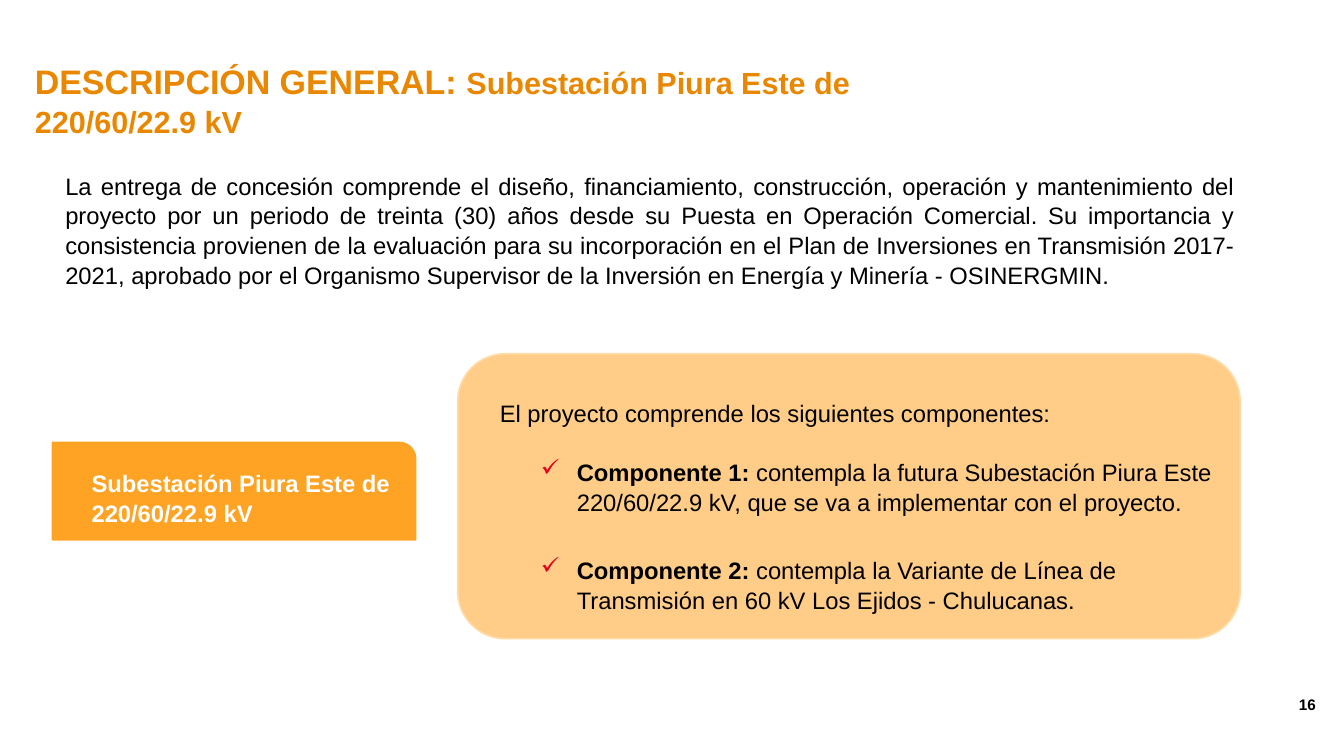
from dataclasses import dataclass

from lxml.etree import SubElement
from pptx import Presentation
from pptx.dml.color import RGBColor
from pptx.enum.shapes import MSO_SHAPE as Preset
from pptx.enum.text import MSO_ANCHOR as Anchor, MSO_AUTO_SIZE as AutoSize, PP_ALIGN as Align
from pptx.oxml.ns import qn
from pptx.util import Emu, Pt

EMU_PER_PX = 9144
FONT = "Arial"
ORANGE_TITLE = RGBColor(0xEA, 0x87, 0x00)
ORANGE_LABEL = RGBColor(0xFF, 0xA3, 0x25)
ORANGE_PANEL = RGBColor(0xFF, 0xCD, 0x87)
ORANGE_EDGE = RGBColor(0xFF, 0xDB, 0xA7)
RED_CHECK = RGBColor(0xE2, 0x05, 0x1B)
BLACK = RGBColor(0x00, 0x00, 0x00)
WHITE = RGBColor(0xFF, 0xFF, 0xFF)


@dataclass(frozen=True)
class Area:
    left: int
    top: int
    width: int
    height: int

    def emu(self) -> list[Emu]:
        return [px(n) for n in (self.left, self.top, self.width, self.height)]


@dataclass(frozen=True)
class Panel:
    preset: Preset
    area: Area
    fill: RGBColor
    line: RGBColor


@dataclass(frozen=True)
class Span:
    text: str
    size: int = 28
    bold: bool = False


@dataclass(frozen=True)
class Para:
    spans: tuple[Span, ...]
    left: int = 0
    hanging: int = 0
    check: bool = False
    after: int = 0


def px(count: int) -> Emu:
    return Emu(count * EMU_PER_PX)


def component(number: int, text: str, after: int = 0) -> Para:
    spans = (Span(f"Componente {number}: ", bold=True), Span(text))
    return Para(spans, left=176, hanging=59, check=True, after=after)


PANELS = (
    Panel(Preset.ROUND_1_RECTANGLE, Area(86, 724, 594, 159), ORANGE_LABEL, ORANGE_LABEL),
    Panel(Preset.ROUNDED_RECTANGLE, Area(749, 579, 1280, 466), ORANGE_PANEL, ORANGE_EDGE),
)
SUBSTATION = "Subestación Piura Este de 220/60/22.9 kV"
TITLE = Para((Span("DESCRIPCIÓN GENERAL: ", 40, True), Span(SUBSTATION, 36, True)))
CONCESSION = Para((Span(
    "La entrega de concesión comprende el diseño, financiamiento, construcción, operación y "
    "mantenimiento del proyecto por un periodo de treinta (30) años desde su Puesta en Operación "
    "Comercial. Su importancia y consistencia provienen de la evaluación para su incorporación en "
    "el Plan de Inversiones en Transmisión 2017-2021, aprobado por el Organismo Supervisor de la "
    "Inversión en Energía y Minería - OSINERGMIN."),), left=50)
COMPONENTS = (
    Para((Span("El proyecto comprende los siguientes componentes:"),), left=50, after=34),
    component(1, "contempla la futura Subestación Piura Este 220/60/22.9 kV, que se va a "
                 "implementar con el proyecto.", after=45),
    component(2, "contempla la Variante de Línea de Transmisión en 60 kV Los Ejidos - Chulucanas."),
)
LABEL = Para((Span(SUBSTATION, bold=True),))
PAGE_NUMBER = Para((Span("16", 18, True),))


def draw_panel(page, panel: Panel) -> None:
    shape = page.shapes.add_shape(panel.preset, *panel.area.emu())
    shape.shadow.inherit = False
    shape.fill.solid()
    shape.fill.fore_color.rgb = panel.fill
    shape.line.color.rgb = panel.line
    shape.line.width = Pt(2)


def set_indent(para, item: Para) -> None:
    properties = para._p.get_or_add_pPr()
    properties.set("marL", str(px(item.left)))
    properties.set("indent", str(px(-item.hanging)))
    if item.check:
        color = SubElement(properties, qn("a:buClr"))
        SubElement(color, qn("a:srgbClr"), val=str(RED_CHECK))
        SubElement(properties, qn("a:buChar"), char="✓")


def write(box, *items: Para, color: RGBColor = BLACK, align: Align = Align.LEFT,
          spacing: float = 1.05) -> None:
    frame = box.text_frame
    frame.word_wrap = True
    frame.auto_size = AutoSize.NONE
    frame.vertical_anchor = Anchor.TOP
    for index, item in enumerate(items):
        para = frame.paragraphs[0] if index == 0 else frame.add_paragraph()
        set_indent(para, item)
        para.alignment = align
        para.line_spacing = spacing
        para.space_before = Pt(0)
        para.space_after = Pt(item.after)
        for span in item.spans:
            run = para.add_run()
            run.text = span.text
            run.font.name = FONT
            run.font.size = Pt(span.size)
            run.font.bold = span.bold
            run.font.color.rgb = color


def add_text(page, area: Area, *items: Para, **style) -> None:
    write(page.shapes.add_textbox(*area.emu()), *items, **style)


def main() -> None:
    deck = Presentation()
    deck.slide_width, deck.slide_height = px(2199), px(1237)
    page = deck.slides.add_slide(deck.slide_layouts.get_by_name("Title Only"))
    for panel in PANELS:
        draw_panel(page, panel)
    title = page.shapes.title
    title.left, title.top, title.width, title.height = Area(47, 91, 1622, 138).emu()
    write(title, TITLE, color=ORANGE_TITLE)
    add_text(page, Area(47, 273, 1981, 199), CONCESSION, align=Align.JUSTIFY)
    add_text(page, Area(758, 645, 1263, 357), *COMPONENTS)
    add_text(page, Area(1998, 1132, 165, 58), PAGE_NUMBER, align=Align.RIGHT, spacing=1.0)
    add_text(page, Area(140, 760, 513, 104), LABEL, color=WHITE)
    deck.save("out.pptx")


if __name__ == "__main__":
    main()
